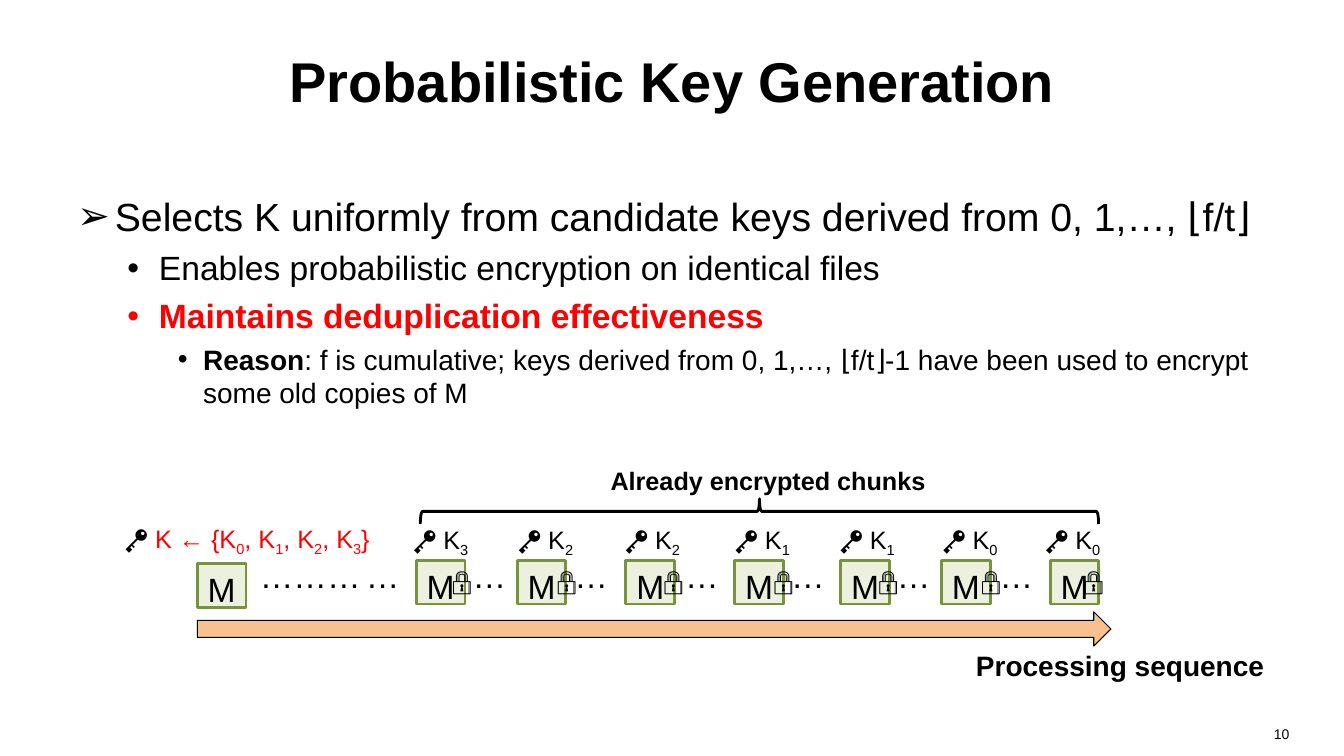
from lxml import etree
from pptx import Presentation
from pptx.dml.color import RGBColor
from pptx.enum.shapes import MSO_SHAPE
from pptx.enum.text import MSO_ANCHOR, MSO_AUTO_SIZE, PP_ALIGN
from pptx.oxml.ns import qn
from pptx.util import Pt

RECT, ARROW, BRACE = MSO_SHAPE.RECTANGLE, MSO_SHAPE.RIGHT_ARROW, MSO_SHAPE.RIGHT_BRACE
LEFT, CENTER, RIGHT = PP_ALIGN.LEFT, PP_ALIGN.CENTER, PP_ALIGN.RIGHT
TOP, MIDDLE = MSO_ANCHOR.TOP, MSO_ANCHOR.MIDDLE
GROW = MSO_AUTO_SIZE.SHAPE_TO_FIT_TEXT

COLORS = {
    "text": "000000",
    "accent": "FF0000",
    "chunk": "EBF1DE",
    "chunk_line": "77933C",
    "arrow": "FAC090",
}


class Deck:
    font = "Arial"

    def __init__(self, width, height):
        self.prs = Presentation()
        self.prs.slide_width, self.prs.slide_height = Pt(width), Pt(height)
        self.slide = self.prs.slides.add_slide(self.prs.slide_layouts[6])

    def color(self, name):
        return RGBColor.from_string(COLORS[name])

    def run(self, p, text, size, color="text", bold=False, sub=False):
        r = p.add_run()
        r.text = text
        r.font.name, r.font.size, r.font.bold = self.font, Pt(size), bold
        r.font.color.rgb = self.color(color)
        if sub:
            r.font._element.set("baseline", "-25000")

    def text(self, x, y, w, h, text, size, bold=False, align=LEFT, anchor=TOP, wrap=False):
        tf = self.slide.shapes.add_textbox(Pt(x), Pt(y), Pt(w), Pt(h)).text_frame
        tf.word_wrap, tf.vertical_anchor = wrap, anchor
        if not wrap:
            tf.auto_size = GROW
        p = tf.paragraphs[0]
        p.alignment = align
        if text:
            self.run(p, text, size, bold=bold)
        return tf

    def bullets(self, x, y, w, h, items):
        tf = self.text(x, y, w, h, "", 0, wrap=True)
        for i, (level, size, mark, indent, hang, before, runs) in enumerate(items):
            p = tf.add_paragraph() if i else tf.paragraphs[0]
            p.level, p.space_before = level, Pt(before)
            pPr = p._p.get_or_add_pPr()
            pPr.set("marL", str(Pt(indent)))
            pPr.set("indent", str(-Pt(hang)))
            etree.SubElement(pPr, qn("a:buFont")).set("typeface", self.font)
            etree.SubElement(pPr, qn("a:buChar")).set("char", mark)
            for text, color, bold in runs:
                self.run(p, text, size, color, bold)

    def key_label(self, x, y, w, parts, color="text"):
        """Key symbol, then plain and subscript parts in turn."""
        p = self.text(x, y, w, 29, "🔑 ", 18).paragraphs[0]
        for i, part in enumerate(parts):
            self.run(p, part, 18, color, sub=i % 2 == 1)

    def shape(self, kind, x, y, w, h, fill=None, line="text", weight=2.0):
        sp = self.slide.shapes.add_shape(kind, Pt(x), Pt(y), Pt(w), Pt(h))
        sp.shadow.inherit = False
        if fill:
            sp.fill.solid()
            sp.fill.fore_color.rgb = self.color(fill)
        else:
            sp.fill.background()
        sp.line.color.rgb = self.color(line)
        sp.line.width = Pt(weight)
        return sp

    def chunk(self, x, y):
        tf = self.shape(RECT, x, y, 34.8, 31.2, "chunk", "chunk_line").text_frame
        tf.vertical_anchor = TOP
        p = tf.paragraphs[0]
        p.alignment = CENTER
        self.run(p, "M", 24)


def main():
    d = Deck(960, 540)

    # Title, bullets and page number
    d.text(48, 12, 864, 90, "Probabilistic Key Generation", 40, True, CENTER, MIDDLE, True)
    d.bullets(48, 134, 864, 190, [
        (0, 28, "➢", 27, 27, 0,
         [("Selects K uniformly from candidate keys derived from 0, 1,…, ⌊f/t⌋", "text", False)]),
        (1, 24, "•", 58.5, 22.5, 5.5,
         [("Enables probabilistic encryption on identical files", "text", False)]),
        (1, 24, "•", 58.5, 22.5, 5.5,
         [("Maintains deduplication effectiveness", "accent", True)]),
        (2, 20, "•", 90, 18, 4.6,
         [("Reason", "text", True),
          (": f is cumulative; keys derived from 0, 1,…, ⌊f/t⌋-1 have been used "
           "to encrypt some old copies of M", "text", False)]),
    ])
    d.text(704, 515, 224, 25, "10", 10, align=RIGHT, wrap=True)

    # Incoming chunk and its candidate keys
    d.chunk(141, 402.5)
    d.text(178.5, 393, 87, 36, "………", 24)
    d.key_label(82, 370, 206,
                ["K ← {K", "0", ", K", "1", ", K", "2", ", K", "3", "}"], "accent")

    # Encrypted chunks: x of the gap dots, chunk and key, then the key index
    encrypted = [
        (254.2, 297.4, 288, "3"),
        (330.5, 369.4, 362.9, "2"),
        (403.2, 447.1, 439.2, "2"),
        (482.4, 524.9, 517.7, "1"),
        (558, 600.5, 592.6, "1"),
        (633.6, 672.5, 666, "0"),
        (707, 750.2, 739.4, "0"),
    ]
    for dots_x, chunk_x, key_x, index in encrypted:
        d.text(dots_x, 393, 39, 36, "…", 24)
        d.chunk(chunk_x, 400.3)
        d.text(key_x + 27.8, 400.6, 35, 29, "🔒", 18)
        d.key_label(key_x, 371, 63.5, ["K", index])

    # Brace over the encrypted chunks
    d.shape(BRACE, 533.5, 123, 18, 484.5).rotation = 270
    d.text(429, 329, 242, 29, "Already encrypted chunks", 18, True)

    # Processing direction
    d.shape(ARROW, 141, 437, 652.5, 24.5, "arrow", weight=0.75)
    d.text(690, 459.5, 222.5, 31.5, "Processing sequence", 20, True)

    d.prs.save("out.pptx")


if __name__ == "__main__":
    main()
